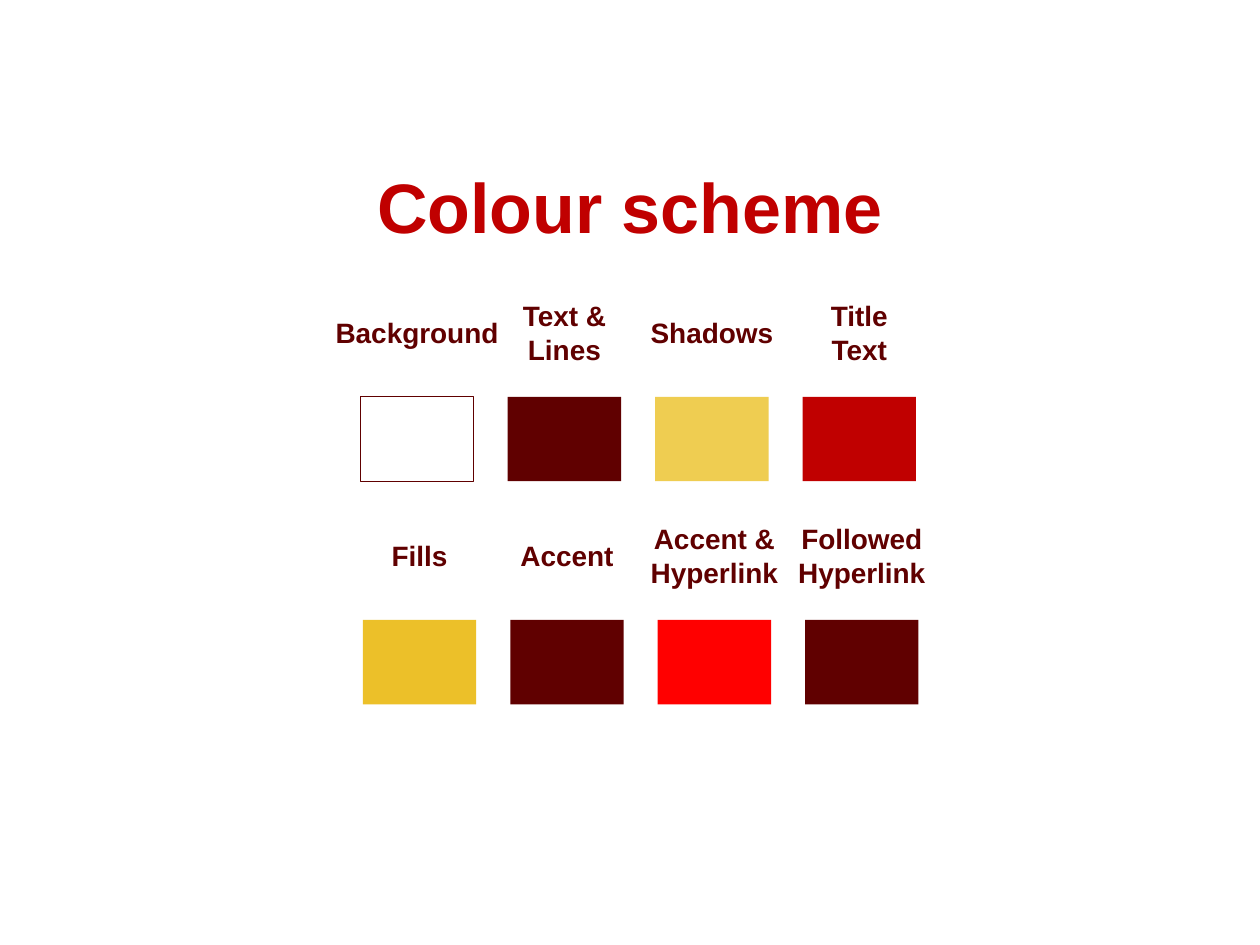
from dataclasses import dataclass

from pptx import Presentation
from pptx.dml.color import RGBColor
from pptx.enum.shapes import MSO_SHAPE
from pptx.enum.text import MSO_ANCHOR, MSO_AUTO_SIZE, PP_ALIGN
from pptx.slide import Slide
from pptx.text.text import TextFrame
from pptx.util import Inches, Pt

RECTANGLE = MSO_SHAPE.RECTANGLE
MIDDLE = MSO_ANCHOR.MIDDLE
GROW = MSO_AUTO_SIZE.SHAPE_TO_FIT_TEXT
CENTER = PP_ALIGN.CENTER
TITLE_ONLY = 5


@dataclass(frozen=True)
class Theme:
    font: str = "Arial"
    title_size: int = 40
    label_size: int = 16
    background: str = "FFFFFF"
    text: str = "600000"
    shadow: str = "EFCD51"
    title: str = "C00000"
    fill: str = "ECC029"
    bright_accent: str = "FF0000"


@dataclass(frozen=True)
class Swatch:
    label: str
    label_width: float
    color: str | None  # None leaves an outlined, unfilled box


@dataclass(frozen=True)
class SwatchRow:
    left: float
    top: float
    swatches: tuple[Swatch, ...]


THEME = Theme()
SWATCH_WIDTH, SWATCH_HEIGHT = 0.9, 0.67
COLUMN_STEP = 1.17
LABEL_RISE = 0.51  # from the swatch top up to the middle of its label
LABEL_HEIGHTS = {1: 0.37, 2: 0.64}

ROWS = (
    SwatchRow(2.86, 3.15, (
        Swatch("Background", 1.51, None),
        Swatch("Text &\nLines", 0.87, THEME.text),
        Swatch("Shadows", 1.19, THEME.shadow),
        Swatch("Title\vText", 0.66, THEME.title),
    )),
    SwatchRow(2.88, 4.92, (
        Swatch("Fills", 0.65, THEME.fill),
        Swatch("Accent", 0.95, THEME.text),
        Swatch("Accent &\nHyperlink", 1.23, THEME.bright_accent),
        Swatch("Followed\nHyperlink", 1.23, THEME.text),
    )),
)


def rgb(color: str) -> RGBColor:
    return RGBColor.from_string(color)


def write_text(frame: TextFrame, text: str, size: int, color: str) -> None:
    frame.text = text
    for para in frame.paragraphs:
        para.alignment = CENTER
        for span in para.runs:
            span.font.name = THEME.font
            span.font.size = Pt(size)
            span.font.bold = True
            span.font.color.rgb = rgb(color)


def add_title(page: Slide, text: str) -> None:
    title = page.shapes.title
    title.left, title.top = Inches(0.5), Inches(1.01)
    title.width, title.height = Inches(9), Inches(1.25)
    title.text_frame.vertical_anchor = MIDDLE
    write_text(title.text_frame, text, THEME.title_size, THEME.title)


def add_swatch(page: Slide, swatch: Swatch, left: float, top: float) -> None:
    box = page.shapes.add_shape(RECTANGLE, Inches(left), Inches(top),
                                Inches(SWATCH_WIDTH), Inches(SWATCH_HEIGHT))
    box.shadow.inherit = False
    if swatch.color is None:
        box.fill.background()
        box.line.color.rgb = rgb(THEME.text)
        box.line.width = Pt(0.75)
    else:
        box.fill.solid()
        box.fill.fore_color.rgb = rgb(swatch.color)
        box.line.fill.background()


def add_label(page: Slide, swatch: Swatch, left: float, top: float) -> None:
    """Centre the label above the swatch at left, top."""
    height = LABEL_HEIGHTS[len(swatch.label.splitlines())]
    label_left = left + (SWATCH_WIDTH - swatch.label_width) / 2
    label_top = top - LABEL_RISE - height / 2
    box = page.shapes.add_textbox(Inches(label_left), Inches(label_top),
                                  Inches(swatch.label_width), Inches(height))
    frame = box.text_frame
    frame.word_wrap = False
    frame.auto_size = GROW
    write_text(frame, swatch.label, THEME.label_size, THEME.text)


def main() -> None:
    deck = Presentation()
    deck.slide_width, deck.slide_height = Inches(10), Inches(7.5)
    page = deck.slides.add_slide(deck.slide_layouts[TITLE_ONLY])
    page.background.fill.solid()
    page.background.fill.fore_color.rgb = rgb(THEME.background)

    add_title(page, "Colour scheme")
    for row in ROWS:
        for column, swatch in enumerate(row.swatches):
            left = row.left + column * COLUMN_STEP
            add_swatch(page, swatch, left, row.top)
            add_label(page, swatch, left, row.top)
    deck.save("out.pptx")


if __name__ == "__main__":
    main()
